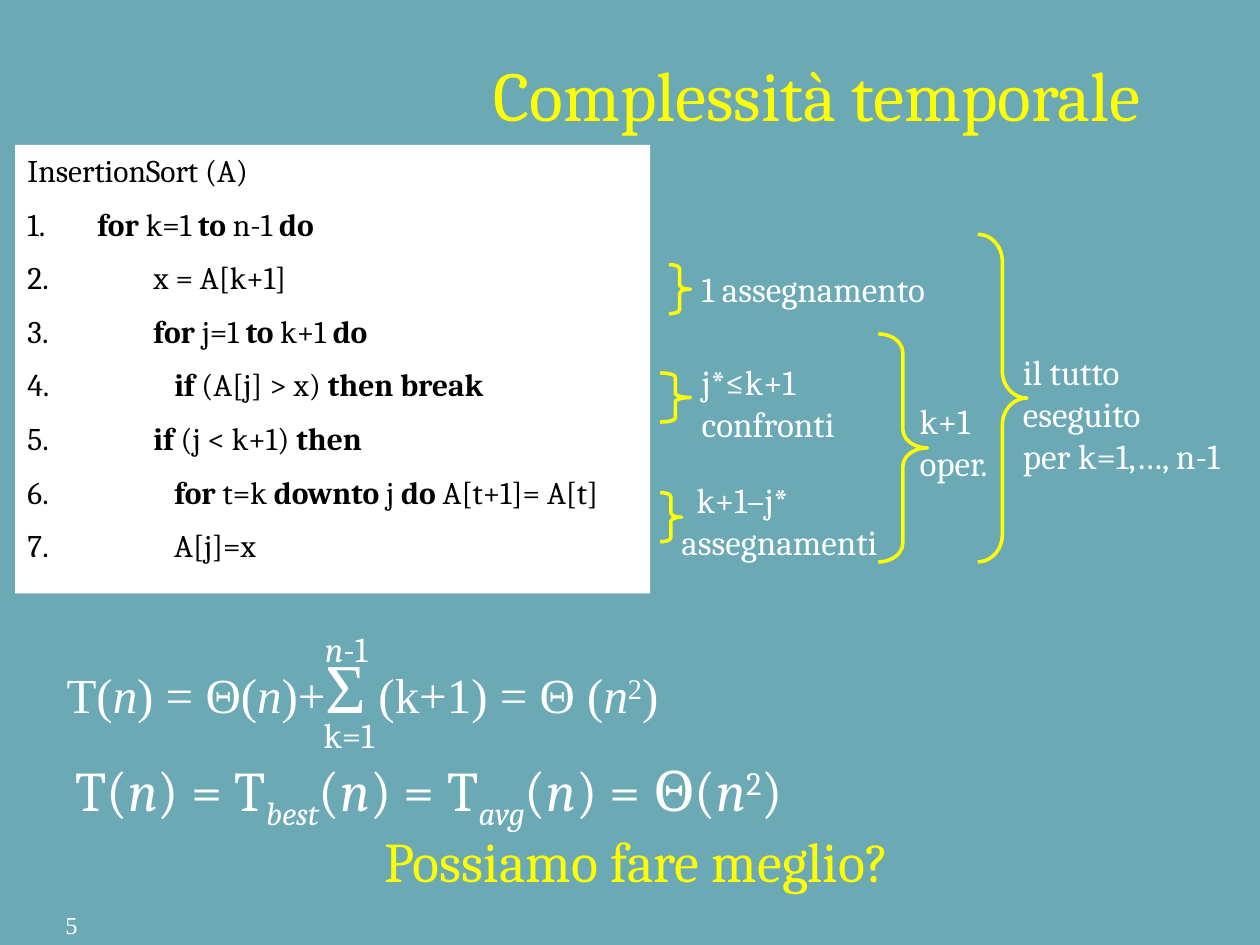
"""Build the slide on the running time of insertion sort."""
from lxml import etree
from pptx import Presentation
from pptx.dml.color import RGBColor
from pptx.enum import shapes, text
from pptx.oxml import ns
from pptx.util import Inches, Pt

TEAL = RGBColor(0x6B, 0xA9, 0xB5)
WHITE = RGBColor(0xFF, 0xFF, 0xFF)
BLACK = RGBColor(0, 0, 0)
YELLOW = RGBColor(0xFF, 0xFF, 0)

BOLD = {"bold": True}
ITALIC = {"italic": True}
N = ("n", ITALIC)
SQUARED = ("2", {"baseline": 30000})


def write(paragraph, runs, size, color=WHITE, font="Cambria"):
    for piece in runs:
        wording, extra = (piece, {}) if isinstance(piece, str) else piece
        run = paragraph.add_run()
        run.text = wording
        values = {"name": font, "size": Pt(size), **extra}
        baseline = values.pop("baseline", None)
        for key, value in values.items():
            setattr(run.font, key, value)
        run.font.color.rgb = color
        if baseline:
            run.font._element.set("baseline", str(baseline))


def add_label(box, lines, size, wrap=False, **style):
    frame = slide.shapes.add_textbox(*map(Inches, box)).text_frame
    frame.word_wrap = wrap
    for index, runs in enumerate(lines):
        paragraph = frame.add_paragraph() if index else frame.paragraphs[0]
        write(paragraph, runs, size, **style)
    return frame


prs = Presentation()
prs.slide_width, prs.slide_height = Inches(10), Inches(7.5)
slide = prs.slides.add_slide(prs.slide_layouts[6])
slide.background.fill.solid()
slide.background.fill.fore_color.rgb = TEAL

listing = slide.shapes.add_shape(
    shapes.MSO_SHAPE.RECTANGLE, Inches(0.12), Inches(1.15), Inches(5.04), Inches(3.56))
listing.shadow.inherit = False
listing.fill.solid()
listing.fill.fore_color.rgb = WHITE
listing.line.fill.background()
code = listing.text_frame
code.vertical_anchor = text.MSO_ANCHOR.TOP
code_lines = [
    "InsertionSort (A)",
    " |for| k=1 |to| n-1 |do",
    " \tx = A[k+1]",
    " \t|for| j=1 |to| k+1 |do",
    " \t   |if| (A[j] > x) |then break",
    " \t|if| (j < k+1) |then",
    " \t   |for| t=k |downto| j |do| A[t+1]= A[t]",
    " \t   A[j]=x",
]
for number, line in enumerate(code_lines):
    paragraph = code.add_paragraph() if number else code.paragraphs[0]
    paragraph.alignment = text.PP_ALIGN.LEFT
    properties = paragraph._p.get_or_add_pPr()
    properties.set("marL", str(Inches(0.5)))
    properties.set("indent", str(-Inches(0.5)))
    if number:
        paragraph.space_before = Pt(9)
        bullet = etree.SubElement(properties, ns.qn("a:buAutoNum"))
        bullet.set("type", "arabicPeriod")
    parts = line.split("|")
    write(paragraph, [(part, BOLD if i % 2 else {}) for i, part in enumerate(parts)],
          18, color=BLACK)

braces = [
    (5.31, 2.1, 0.17, 0.39, 0.19),
    (5.24, 2.96, 0.24, 0.39, 0.14),
    (5.24, 3.91, 0.17, 0.39, 0.19),
    (6.97, 2.65, 0.39, 1.81, 0.38),
    (7.76, 1.86, 0.39, 2.6, 0.55),
]
for *box, curl in braces:
    brace = slide.shapes.add_shape(shapes.MSO_SHAPE.RIGHT_BRACE, *map(Inches, box))
    brace.shadow.inherit = False
    brace.fill.background()
    brace.line.color.rgb = YELLOW
    brace.line.width = Pt(2)
    brace.adjustments[0] = curl

add_label((3.82, 0.36, 5.75, 0.77), [["Complessità temporale"]], 40, wrap=True, color=YELLOW)
add_label((5.47, 2.02, 2.17, 0.5), [["1 assegnamento", (" ", {"size": Pt(24)})]], 20, wrap=True)
add_label((5.47, 2.81, 1.26, 0.77), [["j*≤k+1 confronti"]], 20, wrap=True)
shifts = add_label((5.31, 3.75, 2.44, 0.77), [["k+1–j*"], ["assegnamenti"]], 20, wrap=True)
shifts.paragraphs[0]._p.get_or_add_pPr().set("marL", str(Inches(0.12)))
add_label((7.2, 3.12, 0.76, 0.77), [["k+1"], ["oper."]], 20)
add_label((8.02, 2.73, 1.94, 1.1), [["il tutto"], ["eseguito"], ["per k=1,…, n-1"]], 20, wrap=True)

total = ["T(", N, ") = Θ(", N, ")+", ("Σ", {"size": Pt(40)}), " (k+1) = Θ (", N, SQUARED, ")"]
add_label((0.43, 5.06, 5.59, 1.26), [total], 28, wrap=True, font="Times New Roman")
add_label((2.48, 4.93, 0.57, 0.43), [[N, "-1"]], 20)
add_label((2.47, 5.61, 0.64, 0.43), [["k=1"]], 20)

cases = ["T(", N, ")"]
for case in ("best", "avg"):
    cases += [" = T", (case, {"italic": True, "baseline": -25000}), "(", N, ")"]
cases += [" = Θ(", N, SQUARED, ")"]
add_label((0.5, 5.95, 5.92, 0.64), [cases], 32)
add_label((2.95, 6.51, 4.25, 0.63), [["Possiamo fare meglio?"]], 32, color=YELLOW)
add_label((0.42, 7.17, 2.08, 0.33), [["5"]], 14, wrap=True, font="Times New Roman")

prs.save("out.pptx")
